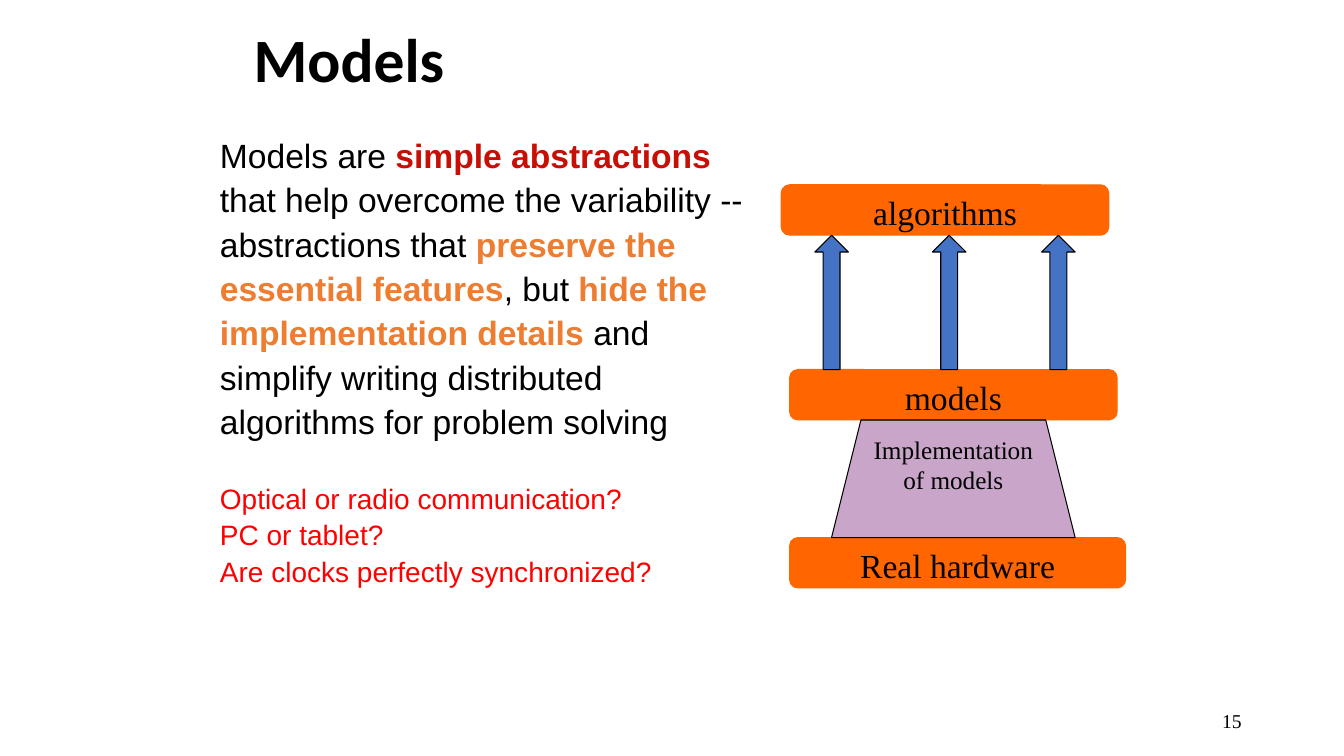
from lxml.etree import SubElement
from pptx import Presentation
from pptx.dml.color import RGBColor
from pptx.enum.shapes import MSO_SHAPE as Shape
from pptx.enum.text import MSO_ANCHOR as Anchor, PP_ALIGN as Align
from pptx.oxml.ns import qn
from pptx.util import Pt

SCALE = 9525
COLORS = {
    "black": "000000", "crimson": "C70F05", "amber": "ED7D31", "red": "FF0000",
    "orange": "FF6600", "blue": "4472C4", "purple": "660066",
}
SERIF = "Times New Roman"
SENTENCE = [
    ("Models are ", "black"),
    ("simple abstractions", "crimson"),
    (" that help overcome the variability -- abstractions that ", "black"),
    ("preserve the essential features", "amber"),
    (", but ", "black"),
    ("hide the implementation details", "amber"),
    (" and simplify writing distributed algorithms for problem solving", "black"),
]
QUESTIONS = [
    "Optical or radio communication?",
    "PC or tablet?",
    "Are clocks perfectly synchronized?",
]


def px(*lengths):
    return [length * SCALE for length in lengths]


def rgb(name):
    return RGBColor.from_string(COLORS[name])


def add_span(para, text, color, **formats):
    span = para.add_run()
    span.text = text
    span.font.color.rgb = rgb(color)
    for name, value in formats.items():
        setattr(span.font, name, value)


def set_frame(frame, anchor=Anchor.TOP):
    frame.word_wrap = True
    frame.vertical_anchor = anchor
    return frame.paragraphs[0]


def add_title(page, box):
    title = page.shapes.title
    title.left, title.top, title.width, title.height = px(*box)
    para = set_frame(title.text_frame, Anchor.MIDDLE)
    para.alignment = Align.LEFT
    para.line_spacing = 0.9
    add_span(para, "Models", "black", name="Calibri", size=Pt(44), bold=True)


def add_body(page, box):
    frame = page.shapes.add_textbox(*px(*box)).text_frame
    para = set_frame(frame)
    for text, color in SENTENCE:
        add_span(para, text, color, name="Arial", size=Pt(24), bold=color != "black")
    for index, question in enumerate(QUESTIONS):
        para = frame.add_paragraph()
        if index == 0:
            para.space_before = Pt(26)
        add_span(para, question, "red", name="Arial", size=Pt(20))
    for para in frame.paragraphs:
        para.line_spacing = 1.1


def add_page_number(page, box):
    para = set_frame(page.shapes.add_textbox(*px(*box)).text_frame, Anchor.MIDDLE)
    para.alignment = Align.RIGHT
    add_span(para, "15", "black", name=SERIF, size=Pt(14))


def add_block(page, kind, box, fill, line, text="", size=24):
    block = page.shapes.add_shape(kind, *px(*box))
    block.shadow.inherit = False
    block.fill.solid()
    block.fill.fore_color.rgb = rgb(fill)
    block.line.color.rgb = rgb(line)
    block.line.width = Pt(0.75)
    if text:
        para = set_frame(block.text_frame)
        para.alignment = Align.CENTER
        add_span(para, text, "black", name=SERIF, size=Pt(size))
    return block


def add_layers(page, box):
    left, top, width, height = box
    bar = 48
    layers = [
        ("algorithms", 0, 0, 312),
        ("models", 8, 176, 312),
        ("Real hardware", 8, height - bar, width - 8),
    ]
    for text, x, y, length in layers:
        add_block(page, Shape.ROUNDED_RECTANGLE, (left + x, top + y, length, bar),
                  "orange", "orange", text)
    for x in (32, 144, 248):
        add_block(page, Shape.UP_ARROW, (left + x, top + bar, 32, 128), "blue", "black")
    bridge = add_block(page, Shape.TRAPEZOID, (left + 48, top + 224, 232, 112),
                       "purple", "black", "Implementation of models", 18)
    tint = next(bridge.element.iter(qn("a:srgbClr")))
    SubElement(tint, qn("a:alpha"), val="35000")


def main():
    deck = Presentation()
    deck.slide_width, deck.slide_height = px(1280, 720)
    page = deck.slides.add_slide(deck.slide_layouts[5])
    add_title(page, (232, 0, 816, 120))
    add_body(page, (200, 120, 528, 490))
    add_page_number(page, (904, 667, 288, 38))
    add_layers(page, (744, 176, 328, 384))
    deck.save("out.pptx")


if __name__ == "__main__":
    main()
